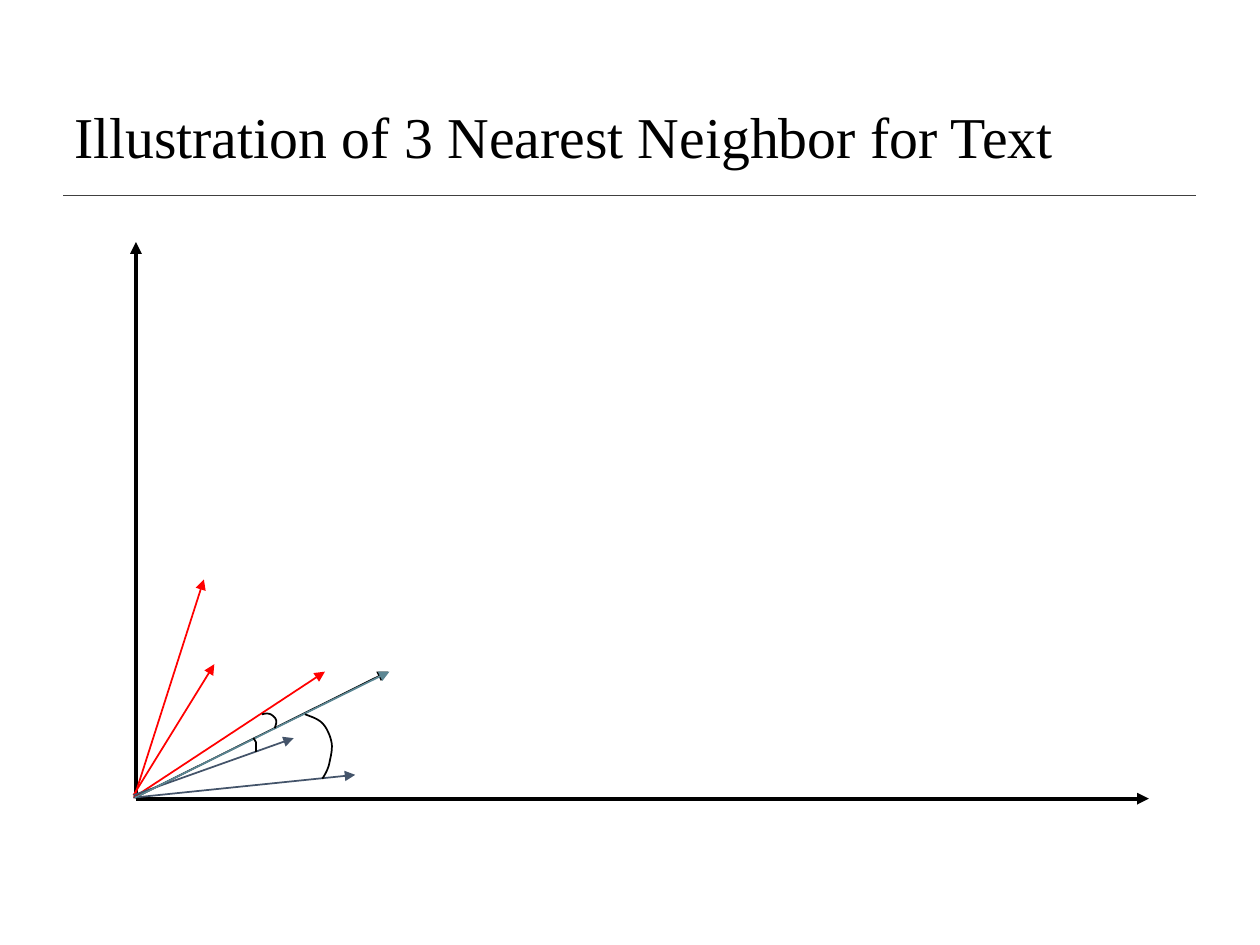
from dataclasses import dataclass

from lxml.etree import SubElement
from pptx import Presentation
from pptx.dml.color import RGBColor
from pptx.enum.shapes import MSO_CONNECTOR as Connector
from pptx.enum.text import MSO_ANCHOR as Anchor, MSO_AUTO_SIZE as AutoSize, PP_ALIGN as Align
from pptx.oxml.ns import qn
from pptx.util import Cm, Pt

Point = tuple[float, float]

COLORS = {
    "ink": "000000",
    "rule": "404040",
    "red class": "FF0000",
    "blue class": "44546A",
    "query": "5B8693",
}


@dataclass
class Ray:
    start: Point
    end: Point
    color: str
    width: float = 1
    arrow: bool = True


@dataclass
class AngleArc:
    start: Point
    curves: list[tuple[Point, Point, Point]]  # two controls and an end point


# All coordinates are in centimetres
TITLE_RULE = Ray((1.27, 3.94), (24.1, 3.94), "rule", arrow=False)
AXES = [
    Ray((2.74, 16.08), (2.74, 4.88), "ink", 2.25),
    Ray((2.74, 16.1), (23.16, 16.1), "ink", 2.25),
]
DOCUMENTS = [
    Ray((2.72, 16.03), (4.11, 11.68), "red class"),
    Ray((2.69, 16.03), (4.32, 13.39), "red class"),
    Ray((2.69, 16.08), (6.55, 13.54), "red class"),
    Ray((2.69, 16.08), (7.16, 15.62), "blue class"),
    Ray((2.69, 16.03), (5.92, 14.88), "blue class"),
]
QUERY = [
    Ray((2.72, 16.08), (7.82, 13.54), "ink"),
    Ray((2.72, 16.08), (7.85, 13.54), "query"),
]
NEIGHBOR_ANGLES = [
    AngleArc((5.11, 14.88), [
        ((5.11, 14.88), (5.16, 14.96), (5.16, 14.96)),
        ((5.16, 15.01), (5.16, 15.09), (5.16, 15.16)),
    ]),
    AngleArc((5.28, 14.4), [
        ((5.36, 14.38), (5.41, 14.38), (5.46, 14.4)),
        ((5.51, 14.43), (5.56, 14.48), (5.56, 14.5)),
        ((5.59, 14.55), (5.56, 14.61), (5.54, 14.68)),
    ]),
    AngleArc((6.15, 14.4), [
        ((6.27, 14.45), (6.4, 14.48), (6.5, 14.58)),
        ((6.58, 14.66), (6.65, 14.81), (6.68, 14.94)),
        ((6.71, 15.06), (6.68, 15.21), (6.65, 15.34)),
        ((6.63, 15.47), (6.58, 15.57), (6.5, 15.7)),
    ]),
]


def rgb(name: str) -> RGBColor:
    return RGBColor.from_string(COLORS[name])


def set_all(target, values: dict) -> None:
    for attribute, value in values.items():
        setattr(target, attribute, value)


def draw_ray(slide, ray: Ray) -> None:
    ends = [Cm(value) for value in ray.start + ray.end]
    connector = slide.shapes.add_connector(Connector.STRAIGHT, *ends)
    connector.line.width = Pt(ray.width)
    connector.line.color.rgb = rgb(ray.color)
    if ray.arrow:
        SubElement(connector.line._get_or_add_ln(), qn("a:tailEnd"), type="triangle")
    SubElement(connector._element.spPr, qn("a:effectLst"))


def curve_points(start: Point, curve: tuple, steps: int = 8) -> list[Point]:
    """Points along a cubic curve, without its start."""
    points = []
    for step in range(1, steps + 1):
        t = step / steps
        weights = ((1 - t) ** 3, 3 * t * (1 - t) ** 2, 3 * t * t * (1 - t), t ** 3)
        x, y = (sum(w * v for w, v in zip(weights, values))
                for values in zip(start, *curve))
        points.append((Cm(x), Cm(y)))
    return points


def draw_arc(slide, arc: AngleArc) -> None:
    builder = slide.shapes.build_freeform(Cm(arc.start[0]), Cm(arc.start[1]))
    start = arc.start
    for curve in arc.curves:
        builder.add_line_segments(curve_points(start, curve), close=False)
        start = curve[-1]
    outline = builder.convert_to_shape()
    outline.shadow.inherit = False
    outline.fill.background()
    outline.line.width = Pt(1)
    outline.line.color.rgb = rgb("ink")


def write_title(slide, wording: str) -> None:
    title = slide.shapes.title
    set_all(title, {"left": Cm(1.24), "top": Cm(1.78),
                    "width": Cm(22.86), "height": Cm(2.06)})
    frame = title.text_frame
    frame.text = wording
    set_all(frame, {"auto_size": AutoSize.NONE, "word_wrap": True,
                    "vertical_anchor": Anchor.MIDDLE})
    paragraph = frame.paragraphs[0]
    set_all(paragraph, {"alignment": Align.LEFT, "line_spacing": 0.9})
    font = paragraph.runs[0].font
    set_all(font, {"name": "Times New Roman", "size": Pt(33), "bold": False})
    font.color.rgb = rgb("ink")


def main() -> None:
    deck = Presentation()
    set_all(deck, {"slide_width": Cm(25.4), "slide_height": Cm(19.05)})
    slide = deck.slides.add_slide(deck.slide_layouts[5])

    # Heading
    write_title(slide, "Illustration of 3 Nearest Neighbor for Text")

    # Axes and document vectors
    for ray in [TITLE_RULE, *AXES, *DOCUMENTS, *QUERY]:
        draw_ray(slide, ray)

    # Angles from the query to its three neighbors
    for arc in NEIGHBOR_ANGLES:
        draw_arc(slide, arc)

    deck.save("out.pptx")


if __name__ == "__main__":
    main()
